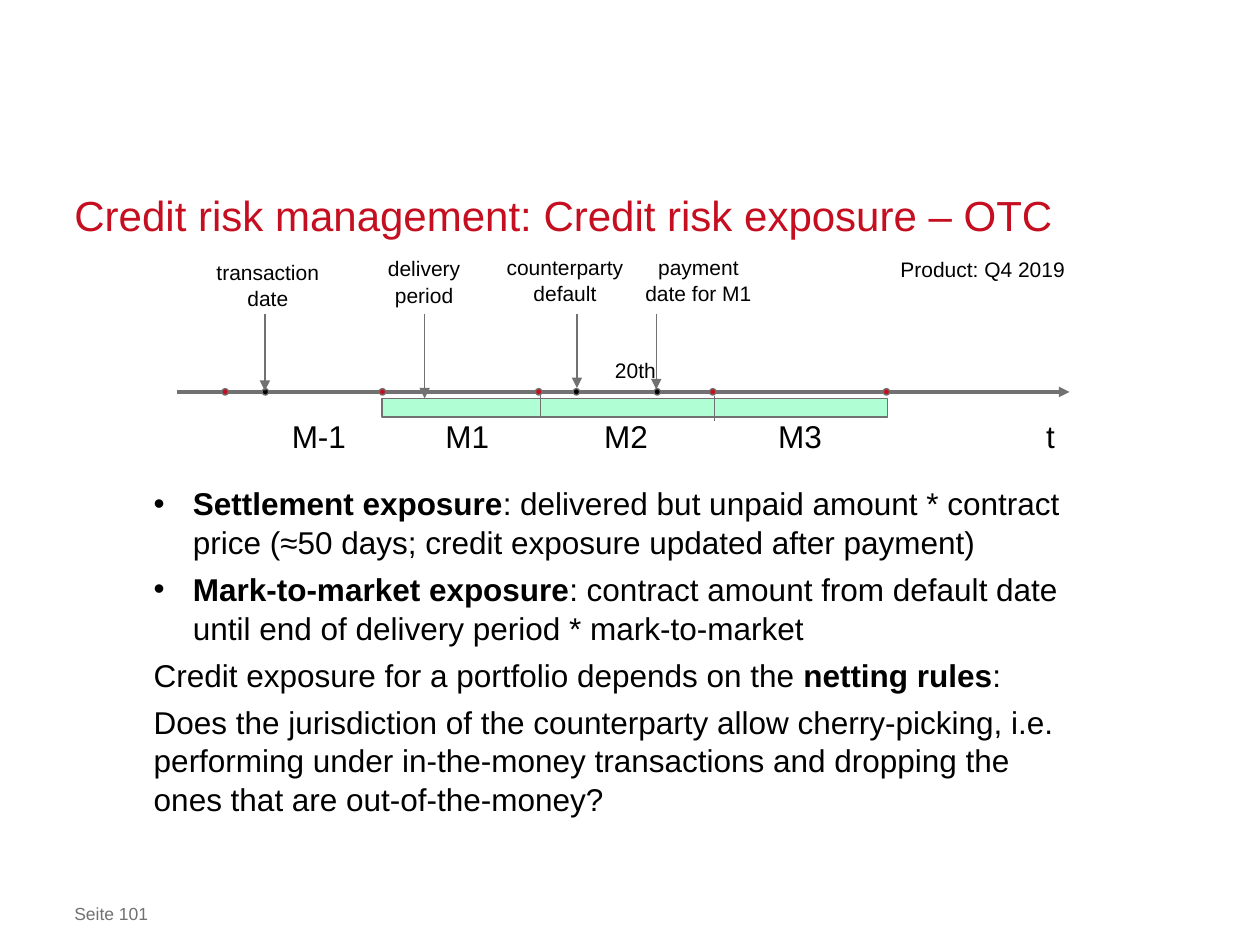
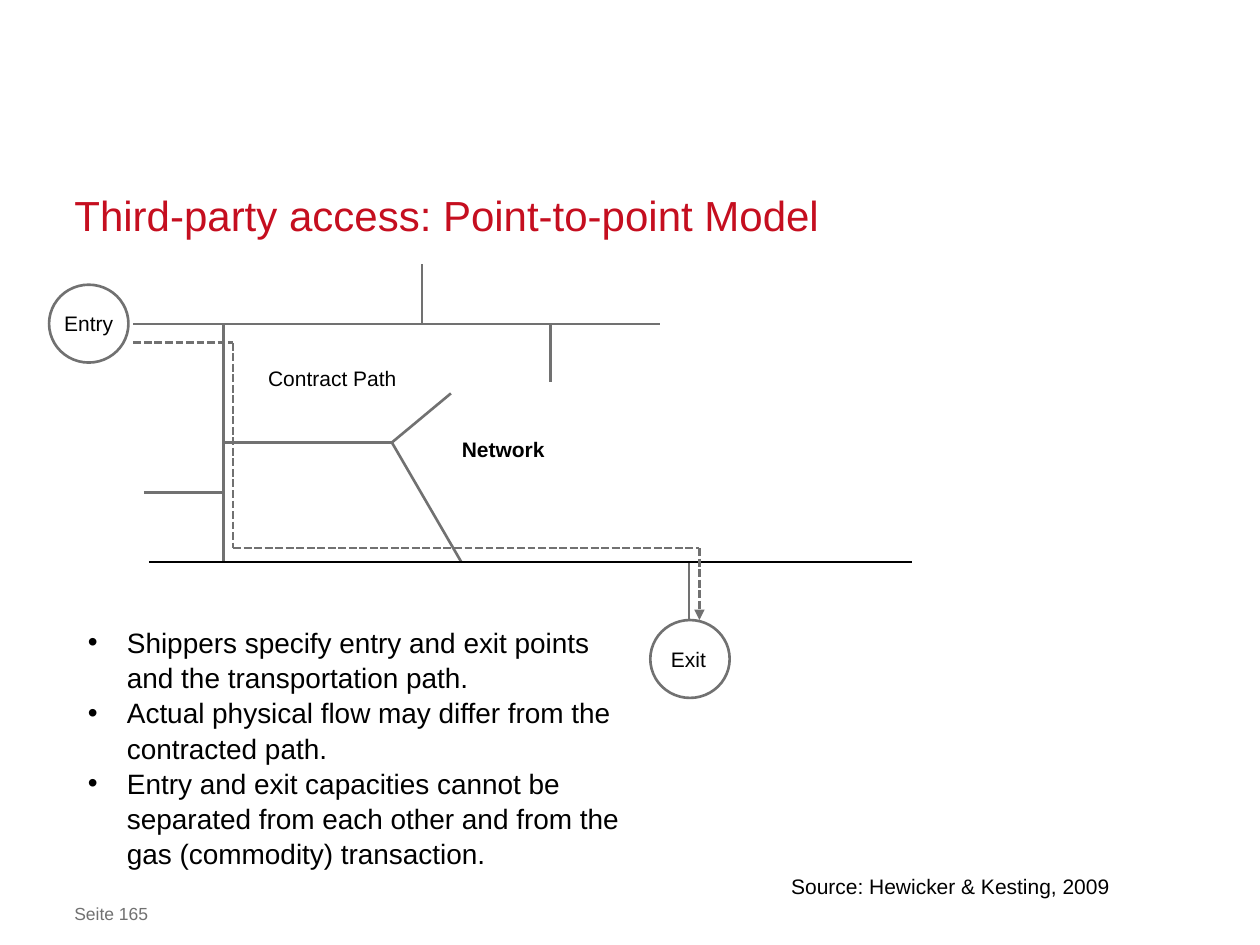
from lxml.etree import SubElement
from pptx import Presentation
from pptx.dml.color import RGBColor
from pptx.enum.dml import MSO_LINE
from pptx.enum.shapes import MSO_CONNECTOR, MSO_SHAPE
from pptx.enum.text import MSO_ANCHOR, MSO_AUTO_SIZE, PP_ALIGN
from pptx.oxml.ns import qn
from pptx.util import Cm, Pt

FONT = "Arial"
RED, GREY, BLACK, WHITE, MINT = "C50E1F", "717171", "000000", "FFFFFF", "B0FED3"
INDENT = Cm(0.79)


def color(value):
    """Turn a hex string into a colour."""
    return RGBColor.from_string(value)


def add_bullet(para):
    """Give a paragraph a round bullet with a hanging indent."""
    properties = para._p.get_or_add_pPr()
    properties.set("marL", str(INDENT))
    properties.set("indent", str(-INDENT))
    SubElement(properties, qn("a:buFont")).set("typeface", FONT)
    SubElement(properties, qn("a:buChar")).set("char", "•")


def write(box, *texts, size=12, ink=BLACK, bold=False, align=PP_ALIGN.LEFT, spacing=1.05,
          before=0, bullets=0, margins=True, wrap=True, anchor=MSO_ANCHOR.TOP):
    """Fill a box with paragraphs; text between bars is bold."""
    frame = box.text_frame
    frame.auto_size = MSO_AUTO_SIZE.NONE
    frame.word_wrap = wrap
    frame.vertical_anchor = anchor
    if not margins:
        frame.margin_left = frame.margin_right = frame.margin_top = frame.margin_bottom = 0
    for number, text in enumerate(texts):
        para = frame.add_paragraph() if number else frame.paragraphs[0]
        if number < bullets:
            add_bullet(para)
        para.alignment = align
        para.line_spacing = spacing
        para.space_before = Pt(before if number else 0)
        for position, part in enumerate(text.split("|")):
            if part:
                span = para.add_run()
                span.text = part
                span.font.name = FONT
                span.font.size = Pt(size)
                span.font.bold = bold or position % 2 == 1
                span.font.color.rgb = color(ink)


def add_text(page, left, top, width, height, *texts, fill=None, **style):
    """Add a text box, with a fill if one is given."""
    box = page.shapes.add_textbox(Cm(left), Cm(top), Cm(width), Cm(height))
    if fill:
        box.fill.solid()
        box.fill.fore_color.rgb = color(fill)
    write(box, *texts, **style)


def add_figure(page, kind, left, top, width, height, fill=None, weight=0.75):
    """Add a grey-outlined preset shape."""
    figure = page.shapes.add_shape(kind, Cm(left), Cm(top), Cm(width), Cm(height))
    figure.shadow.inherit = False
    if fill:
        figure.fill.solid()
        figure.fill.fore_color.rgb = color(fill)
    else:
        figure.fill.background()
    figure.line.color.rgb = color(GREY)
    figure.line.width = Pt(weight)


def add_line(page, x1, y1, x2, y2, weight=0.75, ink=GREY, arrow=False, dashed=False):
    """Add a straight line, optionally dashed or with an arrowhead."""
    line = page.shapes.add_connector(MSO_CONNECTOR.STRAIGHT, Cm(x1), Cm(y1), Cm(x2), Cm(y2))
    line.line.color.rgb = color(ink)
    line.line.width = Pt(weight)
    if dashed:
        line.line.dash_style = MSO_LINE.SQUARE_DOT
    if arrow:
        SubElement(line.line._get_or_add_ln(), qn("a:tailEnd")).set("type", "triangle")
    SubElement(line._element.spPr, qn("a:effectLst"))


def add_page(deck, title, number):
    """Add a page with its red title and page number."""
    page = deck.slides.add_slide(deck.slide_layouts[5])
    heading = page.shapes.title
    heading.left, heading.top, heading.width, heading.height = Cm(1.5), Cm(3.84), Cm(22.4), Cm(0.99)
    write(heading, title, size=24, ink=RED, spacing=Pt(30), margins=False, anchor=MSO_ANCHOR.BOTTOM)
    add_text(page, 1.5, 18.21, 18.4, 0.43, f"Seite {number}", size=10, ink=GREY,
             spacing=1.0, margins=False)
    return page


def add_timeline(page, left, top, width):
    """Draw the delivery timeline with its events and months."""
    axis, dot = top + 2.92, 0.13
    add_line(page, left, axis, left + width, axis, weight=2, arrow=True)
    add_figure(page, MSO_SHAPE.RECTANGLE, left + 4.14, top + 3.05, 10.19, 0.38, fill=MINT)
    for x, start, end in ((7.34, 2.94, 3.43), (10.84, 3, 3.5)):
        add_line(page, left + x, top + start, left + x, top + end)

    month_starts = (0.98, 4.15, 7.3, 10.81, 14.31)
    event_days = (1.79, 8.06, 9.69)
    for fill, centers in ((RED, month_starts), (BLACK, event_days)):
        for x in centers:
            add_figure(page, MSO_SHAPE.OVAL, left + x - dot / 2, axis - dot / 2, dot, dot, fill=fill)

    for label, x in (("M-1", 2.87), ("M1", 5.86), ("M2", 9.06), ("M3", 12.57), ("t", 17.62)):
        add_text(page, left + x - 0.94, top + 3.3, 1.88, 1.02, label, size=18,
                 spacing=1.0, align=PP_ALIGN.CENTER)

    events = (
        ("transaction date", 1.84, 0.1, 1.78, 2.9),
        ("delivery period", 4.99, 0.03, 5, 3.05),
        ("counterparty default", 7.83, 0, 8.07, 2.84),
        ("payment date for M1", 10.52, 0, 9.67, 2.87),
    )
    for label, center, label_top, x, end in events:
        add_text(page, left + center - 1.44, top + label_top, 2.88, 1.27, label,
                 align=PP_ALIGN.CENTER)
        add_line(page, left + x, top + 1.34, left + x, top + end, arrow=True)
    add_text(page, left + 8.55, top + 2.08, 1.4, 0.76, "20th", align=PP_ALIGN.CENTER, wrap=False)
    add_text(page, left + 14.27, top + 0.05, 3.89, 0.76, "Product: Q4 2019",
             align=PP_ALIGN.RIGHT)


def add_network(page, left, top):
    """Draw the pipeline network and the contract path from entry to exit."""
    labels = (
        ("Entry", 0, 0.79, 1.6, False),
        ("Exit", 12.24, 7.55, 1.3, False),
        ("Network", 8.05, 3.33, 2.21, True),
        ("Contract Path", 4.01, 1.88, 3.4, False),
    )
    for label, x, y, width, bold in labels:
        add_text(page, left + x, top + y, width, 0.76, label, fill=WHITE, bold=bold,
                 align=PP_ALIGN.CENTER, wrap=False)

    pipes = (
        (1.7, 1.2, 12.32, 1.2),
        (3.51, 1.2, 3.51, 6),
        (1.91, 4.6, 3.51, 4.6),
        (3.51, 3.59, 6.91, 3.59),
        (6.91, 3.59, 8.1, 2.6),
        (6.91, 3.59, 8.31, 6),
        (7.52, 0, 7.52, 1.2),
        (10.11, 1.2, 10.11, 2.37),
        (12.9, 6, 12.9, 7.17),
    )
    for x1, y1, x2, y2 in pipes:
        add_line(page, left + x1, top + y1, left + x2, top + y2, weight=1.5)
    add_line(page, left + 2.01, top + 6, left + 17.4, top + 6, weight=1.5, ink=BLACK)

    for x, y in ((0, 0.41), (12.12, 7.17)):
        add_figure(page, MSO_SHAPE.OVAL, left + x, top + y, 1.6, 1.57, weight=1.5)

    route = ((1.7, 1.58), (3.71, 1.58), (3.71, 5.72), (13.11, 5.72), (13.11, 7.17))
    for (x1, y1), (x2, y2) in zip(route, route[1:]):
        add_line(page, left + x1, top + y1, left + x2, top + y2, weight=1.5,
                 dashed=True, arrow=(x2, y2) == route[-1])


def build_exposure_page(deck):
    """Build the page on credit risk exposure."""
    page = add_page(deck, "Credit risk management: Credit risk exposure – OTC", 101)
    add_text(
        page, 3.1, 9.75, 18.8, 6.88,
        "|Settlement exposure|: delivered but unpaid amount * contract price "
        "(≈50 days; credit exposure updated after payment)",
        "|Mark-to-market exposure|: contract amount from default date until end of "
        "delivery period * mark-to-market",
        "Credit exposure for a portfolio depends on the |netting rules|:",
        "Does the jurisdiction of the counterparty allow cherry-picking, i.e. performing "
        "under in-the-money transactions and dropping the ones that are out-of-the-money?",
        size=18, spacing=Pt(22), before=5, bullets=2, margins=False)
    add_timeline(page, 3.56, 4.98, 18)


def build_access_page(deck):
    """Build the page on the point-to-point model."""
    page = add_page(deck, "Third-party access: Point-to-point Model", 165)
    add_network(page, 0.99, 5.33)
    add_text(
        page, 1.52, 12.45, 11.61, 5.05,
        "Shippers specify entry and exit points and the transportation path.",
        "Actual physical flow may differ from the contracted path.",
        "Entry and exit capacities cannot be separated from each other and from the gas "
        "(commodity) transaction.",
        size=16, bullets=3)
    add_text(page, 15.7, 17.45, 7.19, 0.76, "Source: Hewicker & Kesting, 2009", fill=WHITE)


def main():
    """Build and save the deck."""
    deck = Presentation()
    deck.slide_width, deck.slide_height = Cm(25.4), Cm(19.05)
    build_exposure_page(deck)
    build_access_page(deck)
    deck.save("out.pptx")


if __name__ == "__main__":
    main()
